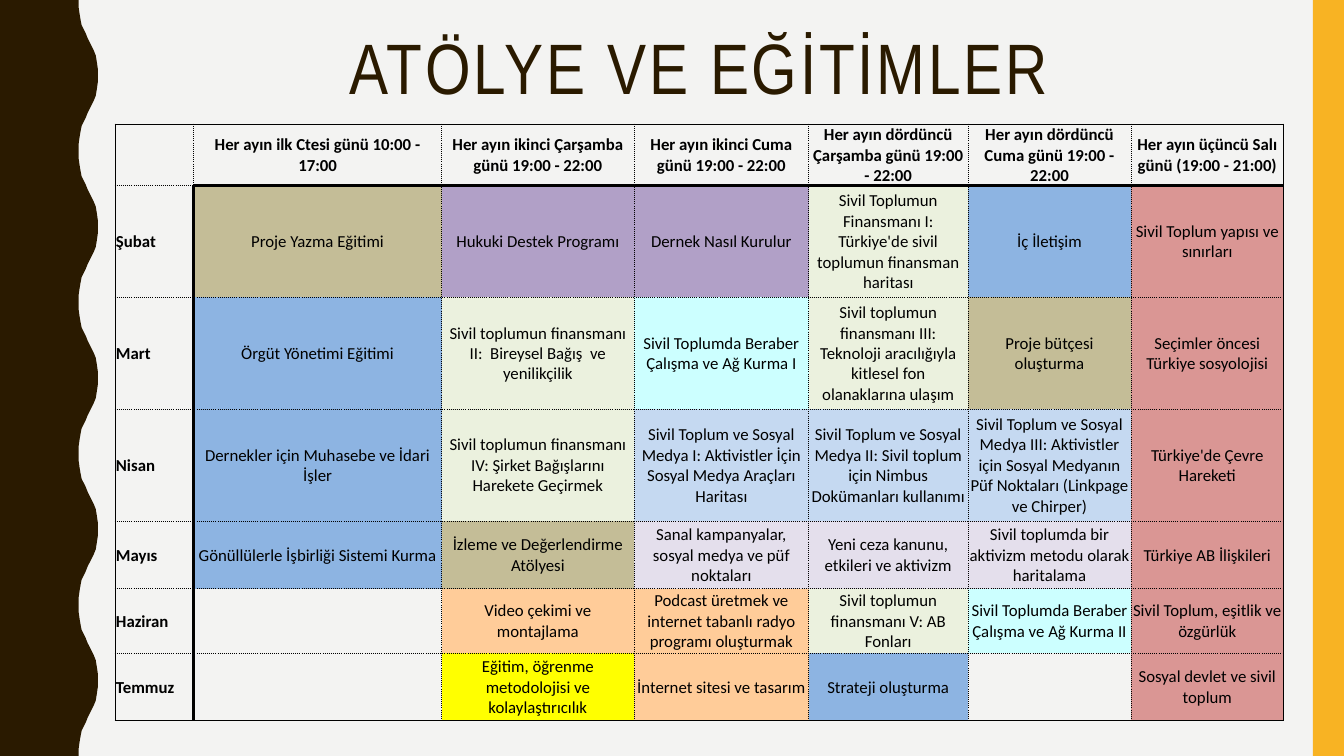
from lxml import etree
from pptx import Presentation
from pptx import util as u
from pptx.dml.color import RGBColor
from pptx.enum import shapes, text
from pptx.oxml.ns import qn

W, H = 13.33, 7.5
DARK, GOLD, PAPER, BLACK = "2A1A00", "F8B323", "F3F3F2", "000000"
KHAKI, PURPLE, GREEN, BLUE, RED = "C4BD97", "B1A0C7", "EBF1DE", "8DB4E2", "DA9694"
AQUA, SKY, LILAC, ORANGE, YELLOW = "CCFFFF", "C5D9F1", "E4DFEC", "FFCC99", "FFFF00"

TITLE = "ATÖLYE VE EĞİTİMLER"
HEADER = [
    "",
    "Her ayın ilk Ctesi günü 10:00 - 17:00",
    "Her ayın ikinci Çarşamba günü 19:00 - 22:00",
    "Her ayın ikinci Cuma günü 19:00 - 22:00",
    "Her ayın dördüncü Çarşamba günü 19:00 - 22:00",
    "Her ayın dördüncü Cuma günü 19:00 - 22:00",
    "Her ayın üçüncü Salı günü (19:00 - 21:00)",
]
MONTHS = [
    ("Şubat", [
        ("Proje Yazma Eğitimi", KHAKI),
        ("Hukuki Destek Programı", PURPLE),
        ("Dernek Nasıl Kurulur", PURPLE),
        ("Sivil Toplumun Finansmanı I: Türkiye'de sivil toplumun finansman haritası", GREEN),
        ("İç İletişim", BLUE),
        ("Sivil Toplum yapısı ve sınırları", RED),
    ]),
    ("Mart", [
        ("Örgüt Yönetimi Eğitimi", BLUE),
        ("Sivil toplumun finansmanı II:  Bireysel Bağış  ve yenilikçilik", GREEN),
        ("Sivil Toplumda Beraber Çalışma ve Ağ Kurma I", AQUA),
        ("Sivil toplumun finansmanı III: Teknoloji aracılığıyla kitlesel fon "
         "olanaklarına ulaşım", GREEN),
        ("Proje bütçesi oluşturma", KHAKI),
        ("Seçimler öncesi Türkiye sosyolojisi", RED),
    ]),
    ("Nisan", [
        ("Dernekler için Muhasebe ve İdari İşler", BLUE),
        ("Sivil toplumun finansmanı IV: Şirket Bağışlarını Harekete Geçirmek", GREEN),
        ("Sivil Toplum ve Sosyal Medya I: Aktivistler İçin Sosyal Medya Araçları Haritası", SKY),
        ("Sivil Toplum ve Sosyal Medya II: Sivil toplum için Nimbus Dokümanları kullanımı", SKY),
        ("Sivil Toplum ve Sosyal Medya III: Aktivistler için Sosyal Medyanın "
         "Püf Noktaları (Linkpage ve Chirper)", SKY),
        ("Türkiye'de Çevre Hareketi", RED),
    ]),
    ("Mayıs", [
        ("Gönüllülerle İşbirliği Sistemi Kurma", BLUE),
        ("İzleme ve Değerlendirme Atölyesi", KHAKI),
        ("Sanal kampanyalar, sosyal medya ve püf noktaları", LILAC),
        ("Yeni ceza kanunu, etkileri ve aktivizm", LILAC),
        ("Sivil toplumda bir aktivizm metodu olarak haritalama", LILAC),
        ("Türkiye AB İlişkileri", RED),
    ]),
    ("Haziran", [
        ("", None),
        ("Video çekimi ve montajlama", ORANGE),
        ("Podcast üretmek ve internet tabanlı radyo programı oluşturmak", ORANGE),
        ("Sivil toplumun finansmanı V: AB Fonları", GREEN),
        ("Sivil Toplumda Beraber Çalışma ve Ağ Kurma II", AQUA),
        ("Sivil Toplum, eşitlik ve özgürlük", RED),
    ]),
    ("Temmuz", [
        ("", None),
        ("Eğitim, öğrenme metodolojisi ve kolaylaştırıcılık", YELLOW),
        ("İnternet sitesi ve tasarım", ORANGE),
        ("Strateji oluşturma", BLUE),
        ("", None),
        ("Sosyal devlet ve sivil toplum", RED),
    ]),
]
COLS = [0.78, 2.46, 1.91, 1.73, 1.58, 1.62, 1.51]
ROWS = [0.61, 1.11, 1.11, 1.11, 0.67, 0.64, 0.67]
HALF_WAVE = [(0.78, 0), (0.78, 0.07), (0.79, 0.14), (0.8, 0.2), (0.81, 0.25),
             (0.83, 0.29), (0.85, 0.33), (0.87, 0.38), (0.89, 0.42), (0.91, 0.46),
             (0.93, 0.5), (0.95, 0.55), (0.96, 0.61), (0.97, 0.68), (0.97, 0.75)]
HALF, HALVES = 0.75, 10
THIN, DOTTED, THICK = (0.5, "solid"), (0.5, "sysDot"), (2, "solid")


def color(value):
    return RGBColor.from_string(value)


def paint(sp, value):
    sp.fill.solid()
    sp.fill.fore_color.rgb = color(value)
    sp.line.fill.background()
    sp.shadow.inherit = False


def write(tf, words, size=12, font="Calibri", ink=BLACK, bold=False,
          align=text.PP_ALIGN.CENTER, spacing=None, tracking=None):
    tf.word_wrap = True
    p = tf.paragraphs[0]
    p.alignment = align
    p.line_spacing = spacing
    r = p.add_run()
    r.text = words
    r.font.size, r.font.name, r.font.bold = u.Pt(size), font, bold
    r.font.color.rgb = color(ink)
    if tracking:
        r.font._element.set("spc", str(tracking * 100))


def border(cell, side, width, dash):
    ln = etree.SubElement(cell._tc.get_or_add_tcPr(), qn("a:ln" + side), w=str(u.Pt(width)))
    fill = etree.SubElement(ln, qn("a:solidFill"))
    etree.SubElement(fill, qn("a:srgbClr"), val=BLACK)
    etree.SubElement(ln, qn("a:prstDash"), val=dash)


def edges(row, col):
    last_row, last_col = len(ROWS) - 1, len(COLS) - 1
    return {
        "L": THIN if col == 0 else THICK if col == 1 and row else DOTTED,
        "R": THIN if col == last_col else THICK if col == 0 and row else DOTTED,
        "T": THIN if row == 0 else THICK if row == 1 and col else DOTTED,
        "B": THIN if row == last_row else THICK if row == 0 and col else DOTTED,
    }


def add_wave(slide):
    points = []
    for n in range(HALVES):
        half = HALF_WAVE if n % 2 == 0 else [(x, HALF - y) for x, y in reversed(HALF_WAVE)]
        points += [(x, n * HALF + y) for x, y in half]
    points.append((0, H))
    builder = slide.shapes.build_freeform(0, 0)
    builder.add_line_segments([(u.Inches(x), u.Inches(y)) for x, y in points], close=True)
    paint(builder.convert_to_shape(), DARK)


def add_schedule(slide):
    frame = slide.shapes.add_table(len(ROWS), len(COLS), u.Inches(1.14), u.Inches(1.23),
                                   u.Inches(sum(COLS)), u.Inches(sum(ROWS)))
    table = frame.table
    table.first_row = table.horz_banding = False
    for column, width in zip(table.columns, COLS):
        column.width = u.Inches(width)
    for row, height in zip(table.rows, ROWS):
        row.height = u.Inches(height)
    grid = [[(words, None) for words in HEADER]]
    grid += [[(month, None)] + events for month, events in MONTHS]
    for i, line in enumerate(grid):
        for j, (words, fill) in enumerate(line):
            cell = table.cell(i, j)
            cell.margin_left = cell.margin_right = cell.margin_top = u.Inches(0.01)
            cell.margin_bottom = 0
            cell.vertical_anchor = text.MSO_ANCHOR.MIDDLE
            for side, style in edges(i, j).items():
                border(cell, side, *style)
            if fill:
                cell.fill.solid()
                cell.fill.fore_color.rgb = color(fill)
            else:
                cell.fill.background()
            if words:
                write(cell.text_frame, words, bold=i == 0 or j == 0,
                      align=text.PP_ALIGN.CENTER if j else text.PP_ALIGN.LEFT)


def main():
    prs = Presentation()
    prs.slide_width, prs.slide_height = u.Inches(W), u.Inches(H)
    slide = prs.slides.add_slide(prs.slide_layouts[6])
    slide.background.fill.solid()
    slide.background.fill.fore_color.rgb = color(PAPER)
    add_wave(slide)
    band = slide.shapes.add_shape(shapes.MSO_SHAPE.RECTANGLE, u.Inches(W - 0.31), 0,
                                  u.Inches(0.31), u.Inches(H))
    paint(band, GOLD)
    title = slide.shapes.add_textbox(u.Inches(1.37), u.Inches(0.23),
                                     u.Inches(11.13), u.Inches(1.63))
    title.text_frame.margin_top = u.Inches(0.1)
    write(title.text_frame, TITLE, size=51, font="Arial Narrow", ink=DARK,
          spacing=0.9, tracking=2)
    add_schedule(slide)
    prs.save("out.pptx")


if __name__ == "__main__":
    main()
